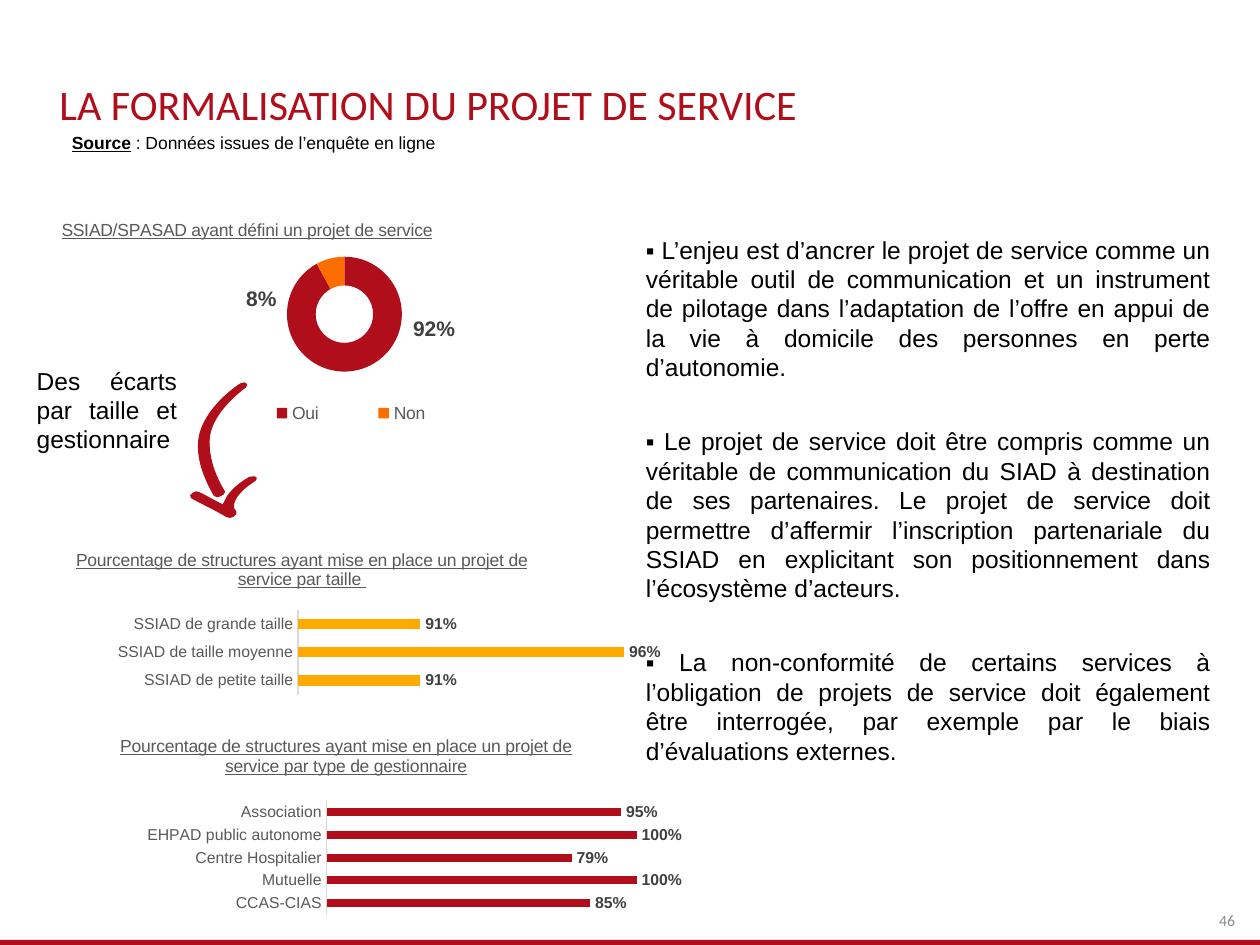
import pptx
import pptx.chart.data
import pptx.dml.color
import pptx.enum.chart
import pptx.enum.shapes
import pptx.enum.text
import pptx.oxml
import pptx.oxml.ns
import pptx.util

Cm = pptx.util.Cm
Pt = pptx.util.Pt
qn = pptx.oxml.ns.qn
align = pptx.enum.text.PP_ALIGN
chart_types = pptx.enum.chart.XL_CHART_TYPE
colours = {
    name: pptx.dml.color.RGBColor.from_string(value)
    for name, value in {
        "red": "AF0E1A", "orange": "FF6C00", "amber": "FFAA00", "black": "000000",
        "grey": "595959", "dark": "404040", "axis": "D9D9D9", "number": "8C8C8C",
    }.items()
}

deck = pptx.Presentation()
deck.slide_width, deck.slide_height = Cm(25.4), Cm(19.05)
page = deck.slides.add_slide(deck.slide_layouts[6])


def style(font, size, colour, bold=False, underline=False, name="Arial"):
    font.name, font.size, font.bold, font.underline = name, Pt(size), bold, underline
    font.color.rgb = colours[colour]


def place(element, index, **layout):
    for old in element.findall(qn("c:layout")):
        element.remove(old)
    target = '<c:layoutTarget val="inner"/>' if element.tag == qn("c:plotArea") else ""
    modes = "" if element.tag == qn("c:dLbl") else '<c:xMode val="edge"/><c:yMode val="edge"/>'
    values = "".join(f'<c:{key} val="{value}"/>' for key, value in layout.items())
    element.insert(index, pptx.oxml.parse_xml(
        f'<c:layout {pptx.oxml.ns.nsdecls("c")}><c:manualLayout>'
        f"{target}{modes}{values}</c:manualLayout></c:layout>"))


footer = page.shapes.add_shape(
    pptx.enum.shapes.MSO_SHAPE.RECTANGLE, 0, Cm(18.95), Cm(25.4), Cm(0.1))
footer.shadow.inherit = False
footer.fill.solid()
footer.fill.fore_color.rgb = colours["red"]
footer.line.fill.background()

charts = [
    dict(kind=chart_types.DOUGHNUT, at=(-0.15, 4.19, 13.26, 4.93),
         title="SSIAD/SPASAD ayant défini un projet de service", title_at=(0.1, 0.03),
         categories=["Oui", "Non"], values=[92, 8],
         plot=(0.22, 0.2, 0.63, 0.47)),
    dict(kind=chart_types.BAR_CLUSTERED, at=(2.36, 14.58, 11.73, 4.24),
         title="Pourcentage de structures ayant mise en place un projet de service "
               "par type de gestionnaire", title_at=(0, 0.04),
         categories=["CCAS-CIAS", "Mutuelle", "Centre Hospitalier",
                     "EHPAD public autonome", "Association"],
         values=[0.85, 1, 0.79, 1, 0.95], colour="red", scale=(0, 1.2),
         plot=(0.36, 0.37, 0.64, 0.54)),
    dict(kind=chart_types.BAR_CLUSTERED, at=(1.47, 10.85, 11.94, 3.51),
         title="Pourcentage de structures ayant mise en place un projet de service "
               "par taille ", title_at=(0, 0.04),
         categories=["SSIAD de petite taille", "SSIAD de taille moyenne",
                     "SSIAD de grande taille"],
         values=[0.91, 0.96, 0.91], colour="amber", scale=(0.88, 0.97),
         plot=(0.38, 0.41, 0.62, 0.49)),
]
for item in charts:
    data = pptx.chart.data.CategoryChartData()
    data.categories = item["categories"]
    data.add_series("Series 1", item["values"])
    chart = page.shapes.add_chart(item["kind"], *map(Cm, item["at"]), data).chart
    style(chart.font, 10, "black")
    chart.has_title = True
    span = chart.chart_title.text_frame.paragraphs[0].add_run()
    span.text = item["title"]
    style(span.font, 10, "grey", underline=True)
    place(chart.element.find(".//" + qn("c:title")), 1, **dict(zip("xy", item["title_at"])))
    place(chart.element.find(".//" + qn("c:plotArea")), 0, **dict(zip("xywh", item["plot"])))
    plot = chart.plots[0]
    series = plot.series[0]
    labels = series.data_labels
    labels.number_format, labels.number_format_is_linked = "0%", False
    if item["kind"] == chart_types.DOUGHNUT:
        plot.vary_by_categories = True
        style(labels.font, 12, "dark", bold=True)
        labels.show_value, labels.show_percentage = False, True
        for index, (colour, x, y) in enumerate([("red", 0.12, -0.11), ("orange", -0.11, 0.11)]):
            point = series.points[index]
            point.format.fill.solid()
            point.format.fill.fore_color.rgb = colours[colour]
            style(point.data_label.font, 12, "dark", bold=True)
            label = chart.element.findall(".//" + qn("c:dLbl"))[index]
            label.find(qn("c:showVal")).set("val", "0")
            label.find(qn("c:showPercent")).set("val", "1")
            place(label, 1, x=x, y=y)
        for leader in chart.element.iter(qn("c:showLeaderLines")):
            leader.set("val", "0")
        chart.element.find(".//" + qn("c:holeSize")).set("val", "72")
        chart.has_legend = True
        chart.legend.position = pptx.enum.chart.XL_LEGEND_POSITION.BOTTOM
        chart.legend.include_in_layout = False
        style(chart.legend.font, 10, "grey")
        place(chart.element.find(".//" + qn("c:legend")), 1, x=0.35, y=0.78, w=0.39, h=0.12)
        continue
    chart.has_legend = False
    plot.vary_by_categories = False
    plot.gap_width = 182
    series.format.fill.solid()
    series.format.fill.fore_color.rgb = colours[item["colour"]]
    style(labels.font, 9, "dark", bold=True)
    labels.show_value = True
    labels.position = pptx.enum.chart.XL_LABEL_POSITION.OUTSIDE_END
    axis = chart.category_axis
    axis.major_tick_mark = axis.minor_tick_mark = pptx.enum.chart.XL_TICK_MARK.NONE
    axis.format.line.color.rgb = colours["axis"]
    axis.format.line.width = Pt(0.75)
    style(axis.tick_labels.font, 9, "grey")
    chart.value_axis.visible = False
    chart.value_axis.has_major_gridlines = False
    chart.value_axis.minimum_scale, chart.value_axis.maximum_scale = item["scale"]

normal = dict(size=14, colour="black")
source = dict(size=10, colour="black")
texts = [
    ((1.2, 1.74, 23.01, 0.89), 0, align.LEFT, 0.85, [
        [("LA FORMALISATION DU PROJET DE SERVICE", dict(size=24, colour="red", name="Calibri"))]]),
    ((12.77, 4.6, 11.89, 12.45), 1, align.JUSTIFY, 1, [
        [("▪ L’enjeu est d’ancrer le projet de service comme un véritable outil de communication "
          "et un instrument de pilotage dans l’adaptation de l’offre en appui de la vie à "
          "domicile des personnes en perte d’autonomie. ", normal)],
        [("▪ Le projet de service doit être compris comme un véritable de communication du SIAD "
          "à destination de ses partenaires. Le projet de service doit permettre d’affermir "
          "l’inscription partenariale du SSIAD en explicitant son positionnement dans "
          "l’écosystème d’acteurs.", normal)],
        [("▪ La non-conformité de certains services à l’obligation de projets de service doit "
          "également être interrogée, par exemple par le biais d’évaluations externes.", normal)]]),
    ((24.26, 18.36, 0.64, 0.38), 0, align.RIGHT, 1, [
        [("46", dict(size=9, colour="number", name="Calibri"))]]),
    ((1.2, 2.54, 15.88, 0.69), 1, align.LEFT, 1, [
        [("Source", dict(source, bold=True, underline=True)),
         (" : Données issues de l’enquête en ligne", source)]]),
    ((0.49, 7.24, 3.33, 2.06), 1, align.JUSTIFY, 1, [
        [("Des écarts par taille et gestionnaire", normal)]]),
]
for at, inset, alignment, spacing, paragraphs in texts:
    box = page.shapes.add_textbox(*map(Cm, at))
    frame = box.text_frame
    frame.word_wrap = True
    frame.margin_left = frame.margin_right = Cm(0.25 * inset)
    frame.margin_top = frame.margin_bottom = Cm(0.13 * inset)
    for index, spans in enumerate(paragraphs):
        para = frame.add_paragraph() if index else frame.paragraphs[0]
        para.alignment, para.line_spacing = alignment, spacing
        if index:
            para.space_before = Pt(21)
        if alignment == align.JUSTIFY:
            para.space_after = Pt(4.5)
        for text, look in spans:
            span = para.add_run()
            span.text = text
            style(span.font, **look)

arrow_curves = [
    [(178, 390), (170, 377, 165, 362, 166, 348), (167, 334, 179, 319, 195, 307),
     (196, 306, 196, 304, 194, 304), (192, 304, 190, 305, 189, 306),
     (172, 318, 160, 334, 158, 348), (156, 364, 162, 379, 170, 393),
     (172, 396, 179, 392, 178, 390)],
    [(180, 410), (172, 405, 161, 400, 152, 395), (149, 393, 156, 389, 158, 391),
     (164, 394, 171, 398, 177, 401), (178, 399, 179, 397, 180, 395),
     (183, 390, 189, 384, 198, 379), (199, 379, 202, 378, 203, 379),
     (204, 380, 202, 382, 200, 383), (195, 386, 191, 390, 188, 394),
     (186, 397, 183, 403, 187, 406), (189, 408, 183, 412, 180, 410)],
]
builder = page.shapes.build_freeform(*arrow_curves[0][0], scale=Cm(0.0254))
for number, (start, *curves) in enumerate(arrow_curves):
    if number:
        builder.move_to(*start)
    builder.add_line_segments(
        [curve[i:i + 2] for curve in curves for i in (0, 2, 4)], close=True)
arrow = builder.convert_to_shape()
segments = list(arrow.element.iter(qn("a:lnTo")))
for first in range(0, len(segments), 3):
    bezier = pptx.oxml.parse_xml(f'<a:cubicBezTo {pptx.oxml.ns.nsdecls("a")}/>')
    segments[first].addprevious(bezier)
    for segment in segments[first:first + 3]:
        bezier.append(segment[0])
        segment.getparent().remove(segment)
arrow.shadow.inherit = False
arrow.fill.solid()
arrow.fill.fore_color.rgb = arrow.line.color.rgb = colours["red"]
arrow.line.width = Pt(0.75)

deck.save("out.pptx")
